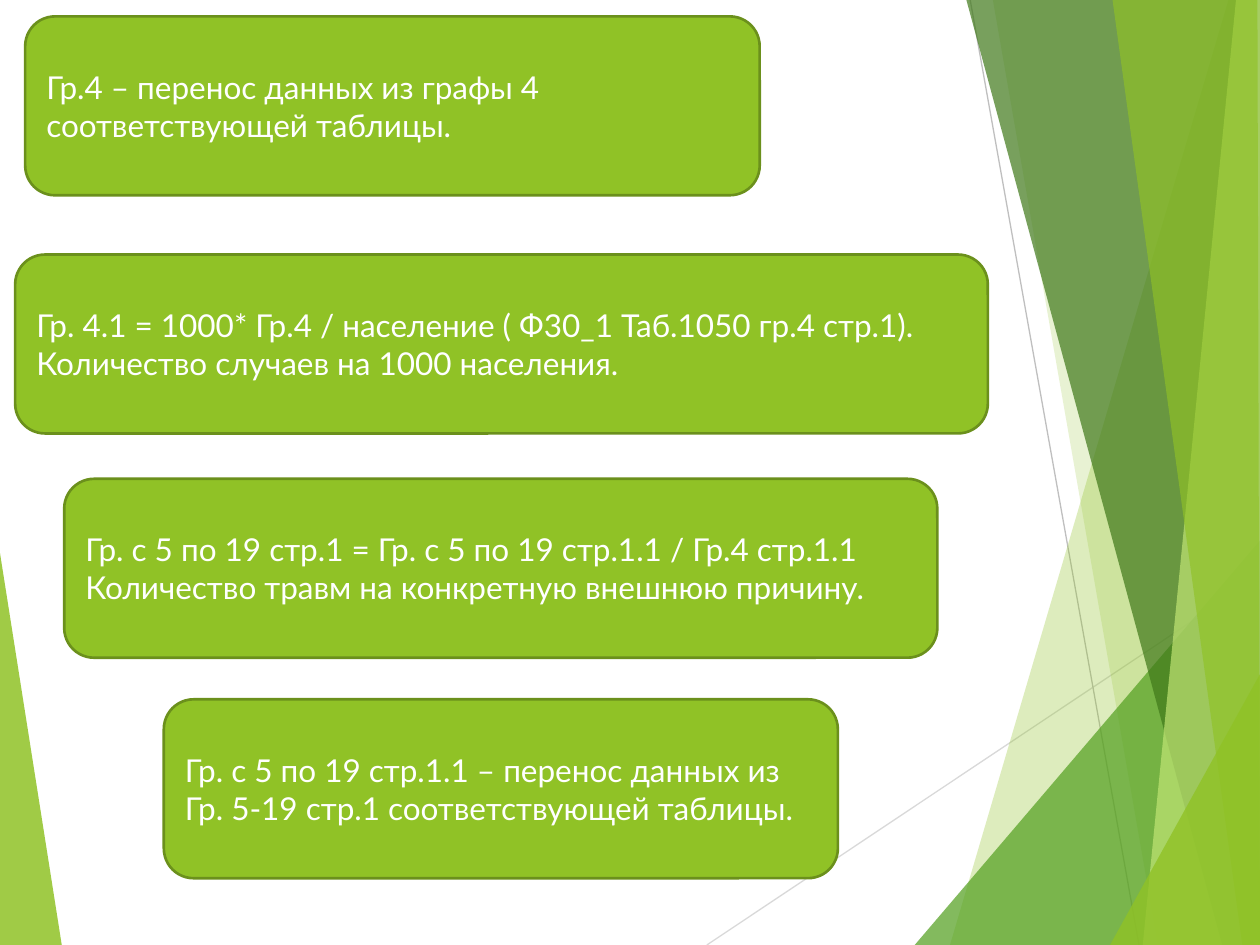
from lxml import etree
from pptx import Presentation
from pptx.dml.color import RGBColor
from pptx.enum.shapes import MSO_CONNECTOR, MSO_SHAPE
from pptx.enum.text import MSO_ANCHOR, PP_ALIGN
from pptx.oxml.ns import qn
from pptx.util import Inches, Pt

STRAIGHT = MSO_CONNECTOR.STRAIGHT
ROUNDED = MSO_SHAPE.ROUNDED_RECTANGLE
MIDDLE = MSO_ANCHOR.MIDDLE
LEFT = PP_ALIGN.LEFT

WIDTH, HEIGHT = 10, 7.5
BLANK_LAYOUT = 6
CARD_HEIGHT = 1.42
FONT = "Lato"
COLORS = {
    "lime": "90C226",
    "lime_edge": "6B901C",
    "pale_lime": "C0E474",
    "green": "54A021",
    "dark_green": "3F7819",
    "gray": "BFBFBF",
    "light_gray": "D9D9D9",
    "white": "FFFFFF",
}

# start, end, color
RAYS = [
    ((5.61, HEIGHT), (WIDTH, 4.57), "light_gray"),
    ((7.7, 0), (9.04, HEIGHT), "gray"),
]

LEFT_FACET = ([(0, 4.39), (0.49, HEIGHT), (0, HEIGHT)], "lime", 85)

# corners, color, opacity in percent
RIGHT_FACETS = [
    ([(9.75, 0), (7.54, HEIGHT), (WIDTH, HEIGHT), (WIDTH, 0)], "lime", 30),
    ([(7.88, 0), (9.19, HEIGHT), (WIDTH, HEIGHT), (WIDTH, 0)], "lime", 20),
    ([(7.26, HEIGHT), (WIDTH, 4.29), (WIDTH, HEIGHT)], "green", 72),
    ([(7.67, 0), (9.7, HEIGHT), (WIDTH, HEIGHT), (WIDTH, 0)], "dark_green", 70),
    ([(9.81, 0), (9.07, HEIGHT), (WIDTH, HEIGHT), (WIDTH, 0)], "pale_lime", 70),
    ([(8.83, 0), (9.86, HEIGHT), (WIDTH, HEIGHT), (9.98, 0)], "lime", 65),
    ([(8.81, HEIGHT), (WIDTH, 5.35), (WIDTH, HEIGHT)], "lime", 80),
]

# left, top, width, paragraphs
CARDS = [
    (0.2, 0.13, 5.83,
     ["Гр.4 – перенос данных из графы 4 соответствующей таблицы."]),
    (0.12, 2.02, 7.72,
     ["Гр. 4.1 = 1000* Гр.4 / население ( Ф30_1 Таб.1050 гр.4 стр.1).",
      "Количество случаев на 1000 населения."]),
    (0.51, 3.8, 6.93,
     ["Гр. с 5 по 19 стр.1 = Гр. с 5 по 19 стр.1.1 / Гр.4 стр.1.1",
      "Количество травм на конкретную внешнюю причину."]),
    (1.3, 5.55, 5.35,
     ["Гр. с 5 по 19 стр.1.1 – перенос данных из "
      "Гр. 5-19 стр.1 соответствующей таблицы."]),
]


def rgb(name):
    return RGBColor.from_string(COLORS[name])


def add_facet(page, corners, color, opacity):
    """Draw a translucent polygon without an outline."""
    points = [(Inches(x), Inches(y)) for x, y in corners]
    builder = page.shapes.build_freeform(*points[0])
    builder.add_line_segments(points[1:], close=True)
    facet = builder.convert_to_shape()
    facet.shadow.inherit = False
    facet.line.fill.background()
    facet.fill.solid()
    facet.fill.fore_color.rgb = rgb(color)
    color_node = next(facet.fill._xPr.iter(qn("a:srgbClr")))
    etree.SubElement(color_node, qn("a:alpha")).set("val", str(opacity * 1000))


def add_ray(page, start, end, color):
    """Draw a thin straight line without a shadow."""
    ray = page.shapes.add_connector(
        STRAIGHT, *(Inches(value) for value in start + end))
    ray.line.color.rgb = rgb(color)
    ray.line.width = Pt(0.75)
    etree.SubElement(ray._element.spPr, qn("a:effectLst"))


def write_text(box, paragraphs, size=18, color="white", align=LEFT, anchor=MIDDLE):
    frame = box.text_frame
    frame.word_wrap = True
    frame.vertical_anchor = anchor
    for index, text in enumerate(paragraphs):
        para = frame.add_paragraph() if index else frame.paragraphs[0]
        para.alignment = align
        span = para.add_run()
        span.text = text
        span.font.name = FONT
        span.font.size = Pt(size)
        span.font.color.rgb = rgb(color)


def add_card(page, left, top, width, paragraphs):
    card = page.shapes.add_shape(
        ROUNDED, Inches(left), Inches(top), Inches(width), Inches(CARD_HEIGHT))
    card.shadow.inherit = False
    card.fill.solid()
    card.fill.fore_color.rgb = rgb("lime")
    card.line.color.rgb = rgb("lime_edge")
    card.line.width = Pt(1.5)
    write_text(card, paragraphs)


def main():
    deck = Presentation()
    deck.slide_width, deck.slide_height = Inches(WIDTH), Inches(HEIGHT)
    page = deck.slides.add_slide(deck.slide_layouts[BLANK_LAYOUT])
    add_facet(page, *LEFT_FACET)
    for ray in RAYS:
        add_ray(page, *ray)
    for facet in RIGHT_FACETS:
        add_facet(page, *facet)
    for card in CARDS:
        add_card(page, *card)
    deck.save("out.pptx")


if __name__ == "__main__":
    main()
